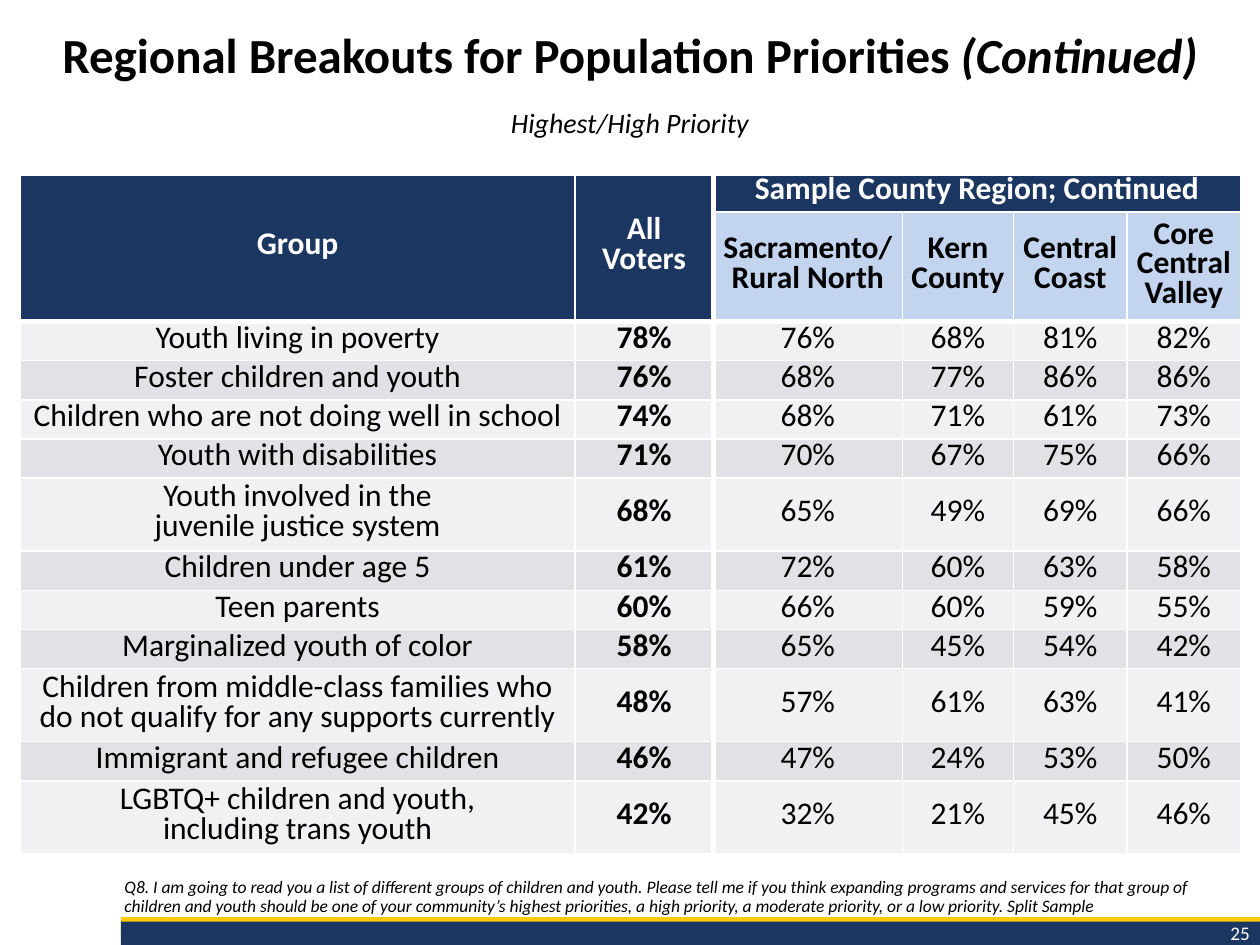
from collections import namedtuple

from lxml.etree import SubElement
from pptx import Presentation
from pptx.dml.color import RGBColor
from pptx.enum.shapes import MSO_SHAPE as Shape
from pptx.enum.text import MSO_ANCHOR as Anchor, MSO_AUTO_SIZE as AutoSize, PP_ALIGN as Align
from pptx.oxml.ns import qn
from pptx.util import Cm, Pt

Box = namedtuple("Box", "left top width height")

FONT = "Calibri"
WHITE, BLACK, NAVY, GOLD = "FFFFFF", "000000", "1B3660", "FCCA09"
PALE_BLUE, BANDS = "C3D4EE", ("F1F1F3", "E2E2E6")

COLUMN_WIDTHS = (11.18, 2.79, 3.81, 2.24, 2.29, 2.29)
HEADER_HEIGHTS = (0.74, 2.21)
ONE_LINE, TWO_LINES = 0.79, 1.47
HEADERS = [
    ("Group", "All Voters", "Sample County Region; Continued", "", "", ""),
    ("", "", "Sacramento/\vRural North", "Kern County", "Central Coast", "Core Central Valley"),
]
RESULTS = [
    ("Youth living in poverty", 78, 76, 68, 81, 82),
    ("Foster children and youth", 76, 68, 77, 86, 86),
    ("Children who are not doing well in school", 74, 68, 71, 61, 73),
    ("Youth with disabilities", 71, 70, 67, 75, 66),
    ("Youth involved in the\njuvenile justice system", 68, 65, 49, 69, 66),
    ("Children under age 5", 61, 72, 60, 63, 58),
    ("Teen parents", 60, 66, 60, 59, 55),
    ("Marginalized youth of color", 58, 65, 45, 54, 42),
    ("Children from middle-class families who\ndo not qualify for any supports currently",
     48, 57, 61, 63, 41),
    ("Immigrant and refugee children", 46, 47, 24, 53, 50),
    ("LGBTQ+ children and youth,\nincluding trans youth", 42, 32, 21, 45, 46),
]
QUESTION = (
    "Q8. I am going to read you a list of different groups of children and youth. "
    "Please tell me if you think expanding programs and services for that group of "
    "children and youth should be one of your community’s highest priorities, a high "
    "priority, a moderate priority, or a low priority. Split Sample"
)


def color(hex_value):
    return RGBColor.from_string(hex_value)


def style_span(span, size, hex_value=BLACK, bold=False, italic=False):
    font = span.font
    font.name, font.size = FONT, Pt(size)
    font.bold, font.italic = bold, italic
    font.color.rgb = color(hex_value)


def lengths(box):
    return [Cm(value) for value in box]


def add_label(page, box, text, size, align, hex_value=BLACK, italic=False,
              anchor=Anchor.TOP, spacing=1.0):
    frame = page.shapes.add_textbox(*lengths(box)).text_frame
    frame.word_wrap = True
    frame.vertical_anchor = anchor
    frame.text = text
    para = frame.paragraphs[0]
    para.alignment, para.line_spacing = align, spacing
    style_span(para.runs[0], size, hex_value, italic=italic)


def add_bar(page, box, hex_value):
    bar = page.shapes.add_shape(Shape.RECTANGLE, *lengths(box))
    bar.shadow.inherit = False
    bar.fill.solid()
    bar.fill.fore_color.rgb = color(hex_value)
    bar.line.fill.background()


def add_footer(page, box):
    add_bar(page, Box(box.left, box.top, box.width, 0.41), GOLD)
    add_bar(page, Box(box.left, box.top + 0.09, box.width, box.height - 0.09), "1B3661")
    number_width = 3.76
    add_label(page, Box(box.left + box.width - number_width + 0.05, box.top - 0.05,
                        number_width, 0.74), "25", 11, Align.RIGHT, WHITE)
    note_height = 1.37
    add_label(page, Box(box.left - 0.18, box.top + 0.1 - note_height,
                        box.width + 0.13, note_height),
              QUESTION, 10, Align.LEFT, italic=True, anchor=Anchor.BOTTOM, spacing=0.9)


def add_heading(page, box):
    title = page.shapes.title
    title.left, title.top, title.width, title.height = lengths(box)
    frame = title.text_frame
    frame.auto_size = AutoSize.NONE
    frame.vertical_anchor = Anchor.TOP
    para = frame.paragraphs[0]
    para.alignment, para.line_spacing = Align.CENTER, 0.9
    for text, italic in (("Regional Breakouts for Population Priorities ", False),
                         ("(Continued)", True)):
        span = para.add_run()
        span.text = text
        style_span(span, 28, bold=True, italic=italic)
    add_label(page, Box(box.left, box.top + 1.5, box.width, 0.94),
              "Highest/High Priority", 16, Align.CENTER, italic=True)


def set_borders(cell, row, column):
    thick = {
        "L": column == 2,
        "R": column == 1,
        "T": row == 2 and column > 1,
        "B": row == 1 or (row == 0 and column < 2),
    }
    properties = cell._tc.get_or_add_tcPr()
    for side, is_thick in thick.items():
        line = SubElement(properties, qn(f"a:ln{side}"), w=str(Pt(3 if is_thick else 1)))
        fill = SubElement(line, qn("a:solidFill"))
        SubElement(fill, qn("a:srgbClr"), val=WHITE)


def cell_fill(row, column):
    if row == 0 or (row == 1 and column < 2):
        return NAVY
    return PALE_BLUE if row == 1 else BANDS[row % 2]


def format_cell(cell, row, column, text):
    set_borders(cell, row, column)
    fill = cell_fill(row, column)
    cell.fill.solid()
    cell.fill.fore_color.rgb = color(fill)
    side_margin = 0.25 if row == 0 else 0.03
    cell.margin_left = cell.margin_right = Cm(side_margin)
    cell.margin_top = Cm(0 if row == 0 else 0.03)
    cell.margin_bottom = Cm(0)
    cell.vertical_anchor = Anchor.MIDDLE
    cell.text_frame.text = text
    for para in cell.text_frame.paragraphs:
        para.alignment, para.line_spacing = Align.CENTER, Pt(17)
        for span in para.runs:
            style_span(span, 18, WHITE if fill == NAVY else BLACK,
                       bold=row < 2 or column == 1)


def add_results(page, box):
    rows = HEADERS + [(group, *(f"{share}%" for share in shares))
                      for group, *shares in RESULTS]
    heights = list(HEADER_HEIGHTS) + [TWO_LINES if "\n" in result[0] else ONE_LINE
                                      for result in RESULTS]
    table = page.shapes.add_table(len(rows), len(COLUMN_WIDTHS), *lengths(box)).table
    table.first_row = table.horz_banding = False
    for column, width in zip(table.columns, COLUMN_WIDTHS):
        column.width = Cm(width)
    for row, height in zip(table.rows, heights):
        row.height = Cm(height)
    for row, texts in enumerate(rows):
        for column, text in enumerate(texts):
            format_cell(table.cell(row, column), row, column, text)
    for first, last in (((0, 0), (1, 0)), ((0, 1), (1, 1)), ((0, 2), (0, 5))):
        table.cell(*first).merge(table.cell(*last))


def main():
    deck = Presentation()
    deck.slide_width, deck.slide_height = Cm(25.4), Cm(19.05)
    page = deck.slides.add_slide(deck.slide_layouts[5])
    add_footer(page, Box(2.44, 18.49, 22.96, 0.56))
    add_results(page, Box(0.41, 3.53, 24.6, 13.68))
    add_heading(page, Box(0, 0.51, 25.4, 3.1))
    deck.save("out.pptx")


if __name__ == "__main__":
    main()
